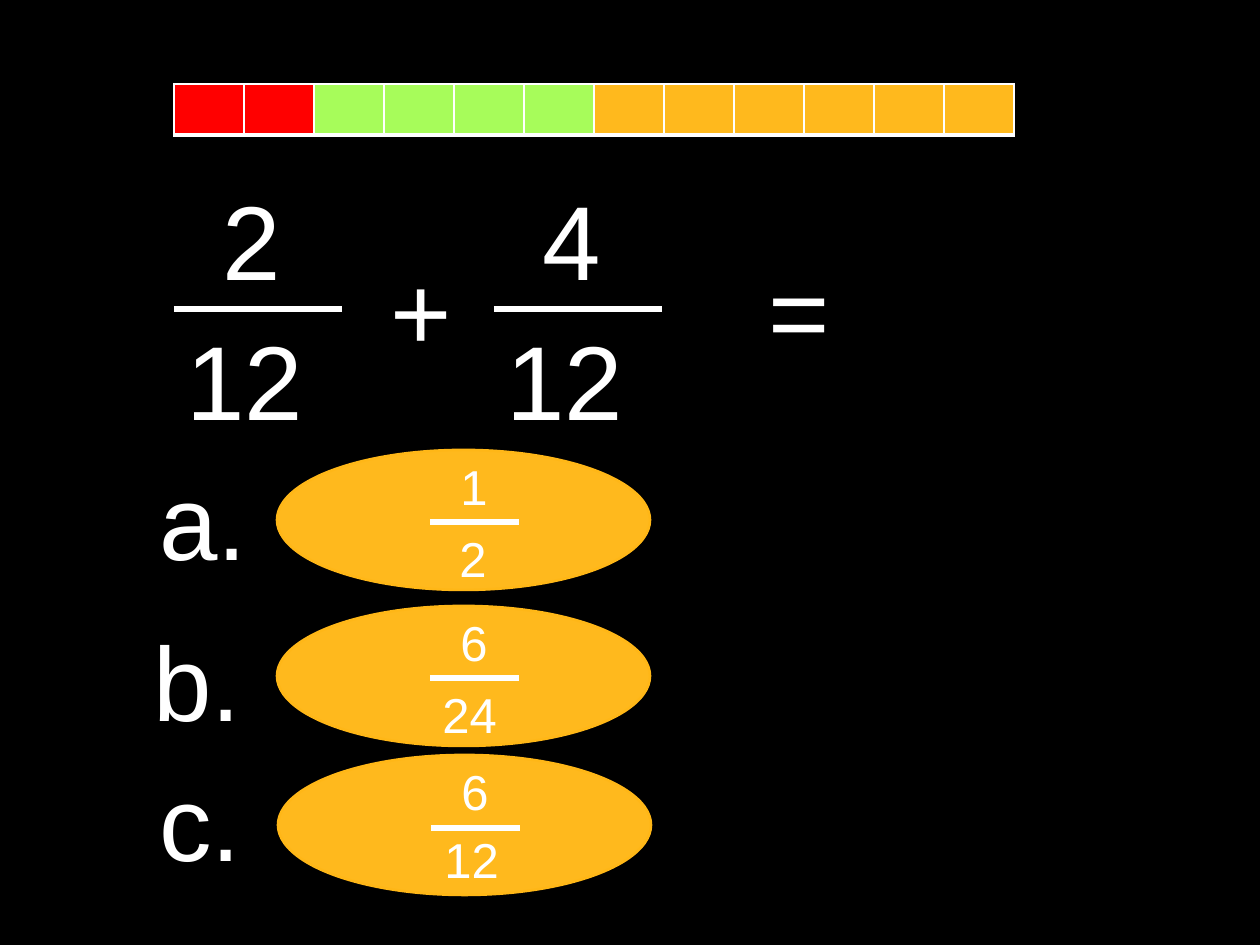
"""Build a quiz slide on adding fractions with a twelve-part bar."""
from lxml import etree
from pptx import Presentation
from pptx.dml.color import RGBColor
from pptx.enum.shapes import MSO_CONNECTOR, MSO_SHAPE
from pptx.enum.text import MSO_AUTO_SIZE
from pptx.oxml.ns import qn
from pptx.util import Emu, Pt

STRAIGHT = MSO_CONNECTOR.STRAIGHT
OVAL = MSO_SHAPE.OVAL
GROW = MSO_AUTO_SIZE.SHAPE_TO_FIT_TEXT
BLACK = RGBColor(0x00, 0x00, 0x00)
WHITE = RGBColor(0xFF, 0xFF, 0xFF)
RED = RGBColor(0xFF, 0x00, 0x00)
GREEN = RGBColor(0xA7, 0xFC, 0x5A)
ORANGE = RGBColor(0xFF, 0xB9, 0x1D)
EDGE = RGBColor(0xFF, 0xB7, 0x17)
PX = 914400 / 126


def add_text(shapes, text, size, box, wrap=False):
    tb = shapes.add_textbox(*[Emu(round(v * PX)) for v in box])
    tf = tb.text_frame
    tf.word_wrap = wrap
    tf.auto_size = GROW
    r = tf.paragraphs[0].add_run()
    r.text = text
    for key, value in {"name": "Arial", "size": Pt(size)}.items():
        setattr(r.font, key, value)
    r.font.color.rgb = WHITE


def add_bar(shapes, x, y, width):
    ends = (x, y, x + width, y)
    line = shapes.add_connector(STRAIGHT, *[Emu(round(v * PX)) for v in ends])
    line.line.color.rgb = WHITE
    line.line.width = Pt(3)
    etree.SubElement(line._element.spPr, qn("a:effectLst"))


prs = Presentation()
prs.slide_width = Emu(round(1260 * PX))
prs.slide_height = Emu(round(945 * PX))
s = prs.slides.add_slide(prs.slide_layouts[6])
s.background.fill.solid()
s.background.fill.fore_color.rgb = BLACK

for x, top, width in [(174, "2", 168), (494, "4", 174)]:
    shapes = s.shapes.add_group_shape().shapes
    add_text(shapes, "12", 60, (x, 309, width, 140), True)
    add_bar(shapes, x, 309, 168)
    add_text(shapes, top, 60, (x + 36, 169, 95, 140), True)

for sign, x in [("=", 756), ("+", 378)]:
    add_text(s.shapes, sign, 60, (x, 239, 87, 140))

colors = [RED] * 2 + [GREEN] * 4 + [ORANGE] * 6
box = [Emu(round(v * PX)) for v in (174, 84, 840, 51)]
table = s.shapes.add_table(1, len(colors), *box).table
for i, color in enumerate(colors):
    table.columns[i].width = Emu(round(70 * PX))
    cell = table.cell(0, i)
    cell.fill.solid()
    cell.fill.fore_color.rgb = color
    tcPr = cell._tc.get_or_add_tcPr()
    for n, (side, width) in enumerate([("L", 1), ("R", 1), ("T", 1), ("B", 3)]):
        ln = etree.Element(qn(f"a:ln{side}"), w=str(Pt(width)))
        fill = etree.SubElement(ln, qn("a:solidFill"))
        etree.SubElement(fill, qn("a:srgbClr"), val=str(WHITE))
        tcPr.insert(n, ln)

for label, x, y, width in [("a.", 147, 449, 113), ("c.", 147, 750, 108), ("b.", 141, 610, 113)]:
    add_text(s.shapes, label, 60, (x, y, width, 140))

answers = [
    (277, 450, "1", "2", (447, 522, 66, 72), 522),
    (277, 606, "6", "24", (430, 678, 108, 72), 678),
    (278, 755, "6", "12", (432, 823, 84, 72), 828),
]
for x, y, top, bottom, bottom_box, bar_y in answers:
    shapes = s.shapes.add_group_shape().shapes
    sp = shapes.add_shape(OVAL, *[Emu(round(v * PX)) for v in (x, y, 373, 140)])
    sp.shadow.inherit = False
    sp.fill.solid()
    sp.fill.fore_color.rgb = ORANGE
    sp.line.color.rgb = EDGE
    sp.line.width = Pt(1.5)
    add_text(shapes, bottom, 28, bottom_box, True)
    add_text(shapes, top, 28, (x + 171, y, 53, 72))
    add_bar(shapes, x + 153, bar_y, 89)

prs.save("out.pptx")
